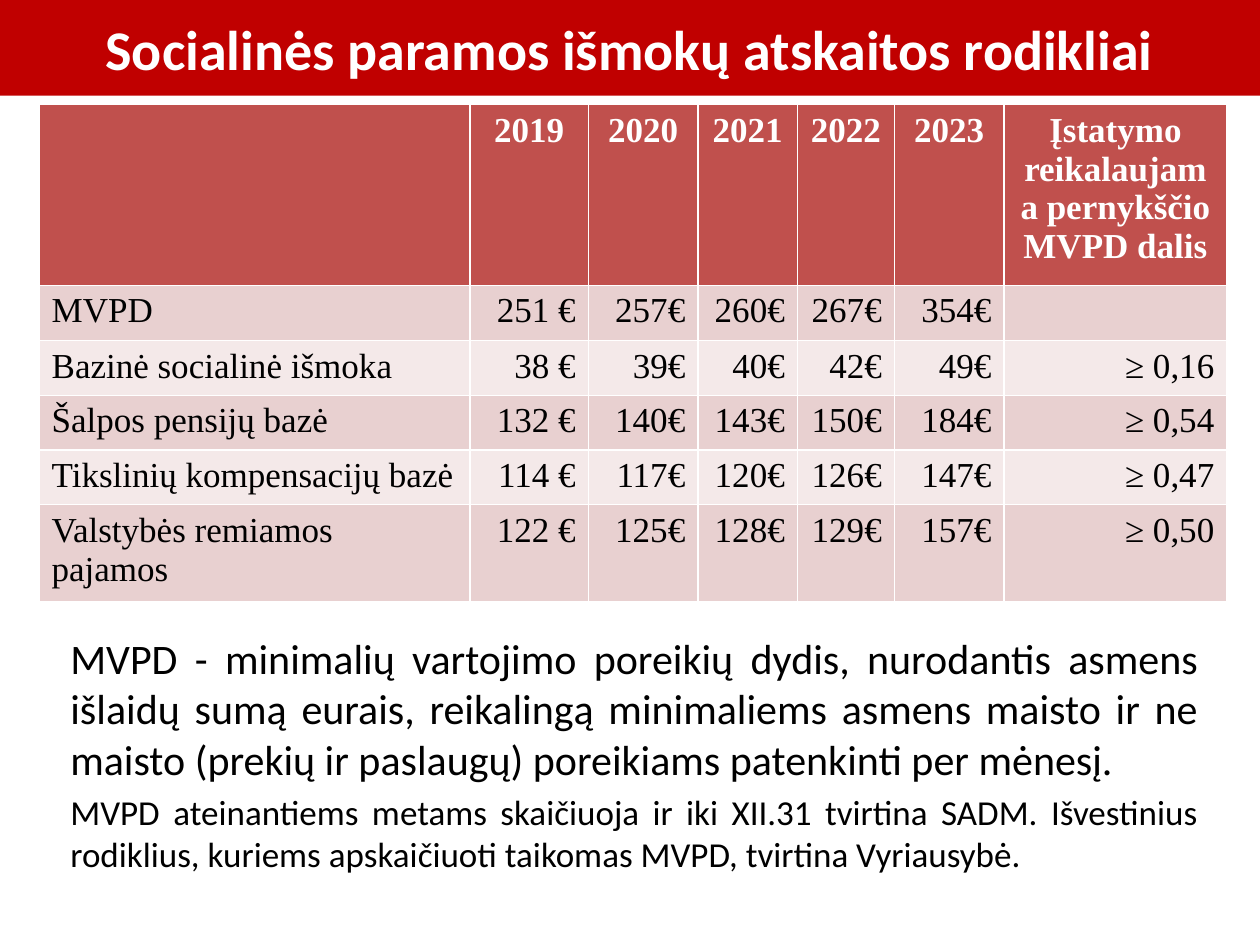
from pptx import Presentation
from pptx import util as u
from pptx.dml.color import RGBColor
from pptx.enum import shapes, text

WHITE = RGBColor(0xFF, 0xFF, 0xFF)
BLACK = RGBColor(0x00, 0x00, 0x00)
TITLE_RED = RGBColor(0xC0, 0x00, 0x00)
HEADER_RED = RGBColor(0xC0, 0x50, 0x4D)
BAND_DARK = RGBColor(0xE8, 0xD0, 0xD0)
BAND_LIGHT = RGBColor(0xF4, 0xE9, 0xE9)


def add_run(paragraph, words, font_name, size, color, bold=False):
    run = paragraph.add_run()
    run.text = words
    run.font.name = font_name
    run.font.size = u.Pt(size)
    run.font.color.rgb = color
    run.font.bold = bold


presentation = Presentation()
presentation.slide_width = u.Inches(10)
presentation.slide_height = u.Inches(7.5)
slide = presentation.slides.add_slide(presentation.slide_layouts[6])

title = slide.shapes.add_shape(
    shapes.MSO_SHAPE.RECTANGLE, u.Inches(0), u.Inches(0), u.Inches(10), u.Inches(0.76)
)
title.shadow.inherit = False
title.fill.solid()
title.fill.fore_color.rgb = TITLE_RED
title.line.fill.background()
title.text_frame.vertical_anchor = text.MSO_ANCHOR.MIDDLE
paragraph = title.text_frame.paragraphs[0]
paragraph.alignment = text.PP_ALIGN.CENTER
add_run(paragraph, "Socialinės paramos išmokų atskaitos rodikliai", "Calibri", 32, WHITE, True)

definitions = [
    (
        "MVPD - minimalių vartojimo poreikių dydis, nurodantis asmens išlaidų sumą eurais, "
        "reikalingą minimaliems asmens maisto ir ne maisto (prekių ir paslaugų) poreikiams "
        "patenkinti per mėnesį.",
        24,
        0,
    ),
    (
        "MVPD ateinantiems metams skaičiuoja ir iki XII.31 tvirtina SADM. Išvestinius "
        "rodiklius, kuriems apskaičiuoti taikomas MVPD, tvirtina Vyriausybė.",
        20,
        4,
    ),
]
body = slide.shapes.add_textbox(u.Inches(0.46), u.Inches(4.97), u.Inches(9.15), u.Inches(2.17))
body.text_frame.word_wrap = True
for index, (words, size, space) in enumerate(definitions):
    paragraph = body.text_frame.paragraphs[0] if index == 0 else body.text_frame.add_paragraph()
    paragraph.alignment = text.PP_ALIGN.JUSTIFY
    paragraph.space_before = u.Pt(space)
    add_run(paragraph, words, "Calibri", size, BLACK)

rows = [
    ["", "2019", "2020", "2021", "2022", "2023", "Įstatymo reikalaujama pernykščio MVPD dalis"],
    ["MVPD", "251 €", "257€", "260€", "267€", "354€", ""],
    ["Bazinė socialinė išmoka", "38 €", "39€", "40€", "42€", "49€", "≥ 0,16"],
    ["Šalpos pensijų bazė", "132 €", "140€", "143€", "150€", "184€", "≥ 0,54"],
    ["Tikslinių kompensacijų bazė", "114 €", "117€", "120€", "126€", "147€", "≥ 0,47"],
    ["Valstybės remiamos pajamos", "122 €", "125€", "128€", "129€", "157€", "≥ 0,50"],
]
column_widths = [3.42, 0.94, 0.87, 0.79, 0.77, 0.87, 1.77]
row_heights = [1.32, 0.44, 0.41, 0.41, 0.41, 0.71]

table = slide.shapes.add_table(
    len(rows), len(column_widths),
    u.Inches(0.31), u.Inches(0.83), u.Inches(sum(column_widths)), u.Inches(sum(row_heights)),
).table
for column, width in zip(table.columns, column_widths):
    column.width = u.Inches(width)
for row, height in zip(table.rows, row_heights):
    row.height = u.Inches(height)

for row_index, values in enumerate(rows):
    is_header = row_index == 0
    band = HEADER_RED if is_header else BAND_DARK if row_index % 2 else BAND_LIGHT
    for column_index, value in enumerate(values):
        cell = table.cell(row_index, column_index)
        cell.fill.solid()
        cell.fill.fore_color.rgb = band
        if not value:
            continue
        paragraph = cell.text_frame.paragraphs[0]
        if is_header:
            paragraph.alignment = text.PP_ALIGN.CENTER
        elif column_index > 0:
            paragraph.alignment = text.PP_ALIGN.RIGHT
        color = WHITE if is_header else BLACK
        add_run(paragraph, value, "Times New Roman", 20, color, is_header)

presentation.save("out.pptx")
